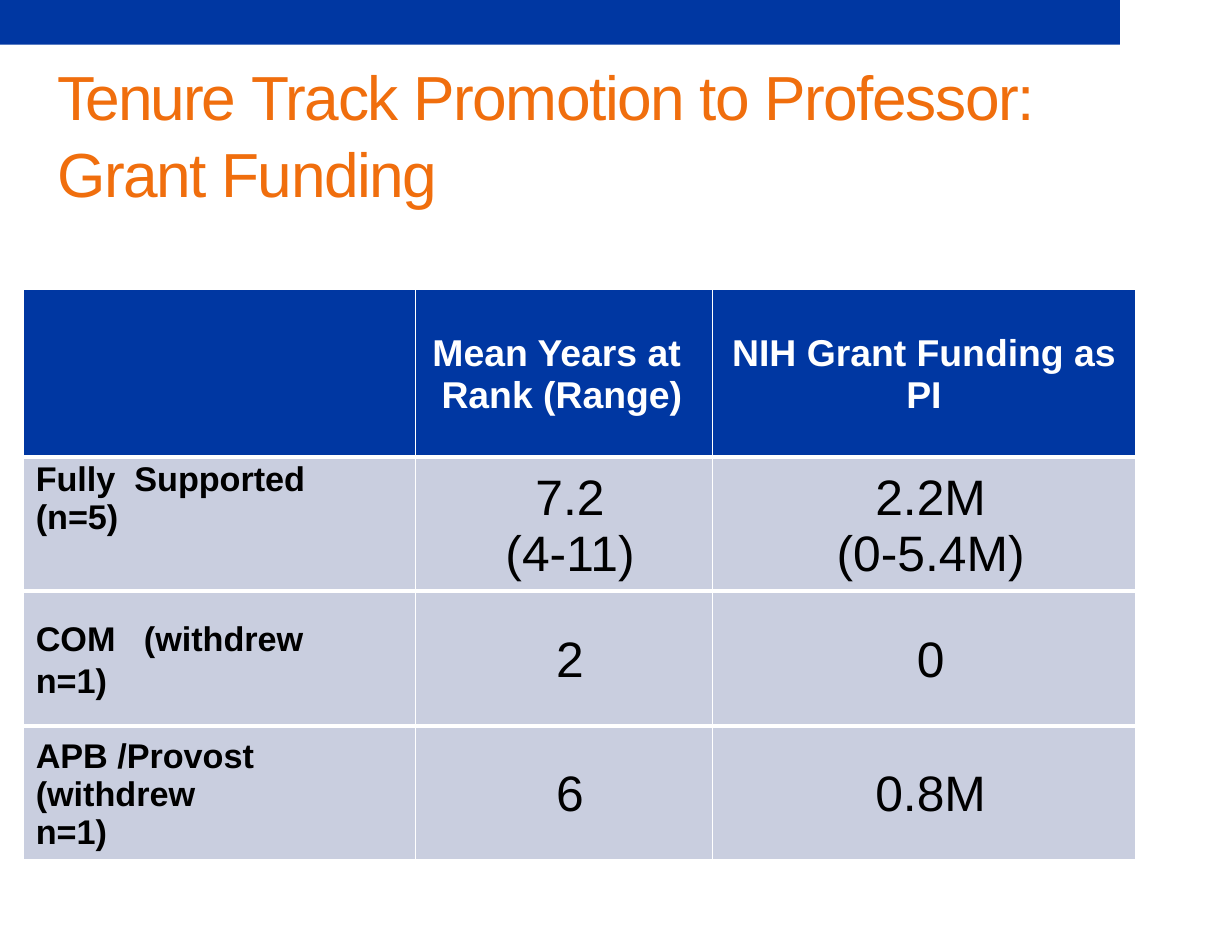
"""Build the slide on grant funding for tenure track promotions to professor."""
from dataclasses import dataclass

from lxml.etree import SubElement
from pptx import Presentation
from pptx.dml.color import RGBColor as Rgb
from pptx.enum.shapes import MSO_SHAPE as Shape
from pptx.enum.text import MSO_ANCHOR as Anchor, MSO_AUTO_SIZE as AutoSize, PP_ALIGN as Align
from pptx.oxml.ns import qn
from pptx.util import Inches, Pt


@dataclass(frozen=True)
class Theme:
    font: str = "Arial"
    blue: str = "0037A2"
    orange: str = "F06E0D"
    band: str = "C9CEDF"
    white: str = "FFFFFF"
    black: str = "000000"
    title: int = 40
    header: int = 24
    label: int = 22
    value: int = 32


THEME = Theme()
TITLE = [("Tenure ", -1.4), ("Track Promotion to Professor: Grant Funding", -0.9)]
HEADERS = [[], ["Mean Years at  Rank (Range)"], ["NIH Grant Funding as PI"]]
OUTCOMES = [
    [["Fully  Supported  (n=5)"], ["7.2", "(4-11)"], ["2.2M", "(0-5.4M)"]],
    [["COM   (withdrew", "n=1)"], ["2"], ["0"]],
    [["APB /Provost\v(withdrew \vn=1)"], ["6"], ["0.8M"]],
]
COLUMNS = [3.5, 2.65, 3.78]
ROWS = [1.5, 1.2, 1.2, 1.2]
INDENTS = [0.11, 0.11, 0.12]
HEADER_RIGHT = [0, 0.24, 0.12]
LABEL_RIGHT = 0.6


def style(paragraph, size, color, bold=False, align=Align.LEFT, before=0, indent=0):
    font = paragraph.font
    font.name, font.size, font.bold = THEME.font, Pt(size), bold
    font.color.rgb = Rgb.from_string(color)
    paragraph.alignment, paragraph.space_before = align, Pt(before)
    properties = paragraph._p.get_or_add_pPr()
    properties.set("marL", str(Inches(indent)))
    properties.set("indent", "0")


def paint(shape, color):
    shape.fill.solid()
    shape.fill.fore_color.rgb = Rgb.from_string(color)


def set_borders(cell, top, bottom):
    properties = cell._tc.get_or_add_tcPr()
    for position, (side, width) in enumerate(zip("LRTB", (1, 1, top, bottom))):
        line = SubElement(properties, qn(f"a:ln{side}"), w=str(Pt(width)))
        fill = SubElement(line, qn("a:solidFill"))
        SubElement(fill, qn("a:srgbClr"), val=THEME.white)
        properties.insert(position, line)


def add_title(slide):
    title = slide.shapes.title
    title.left, title.top, title.width, title.height = map(Inches, (0.5, 0.5, 9.41, 1.36))
    frame = title.text_frame
    frame.margin_left = frame.margin_right = frame.margin_bottom = 0
    frame.margin_top = Inches(0.01)
    frame.word_wrap, frame.auto_size = True, AutoSize.SHAPE_TO_FIT_TEXT
    frame.vertical_anchor = Anchor.MIDDLE
    heading = frame.paragraphs[0]
    style(heading, THEME.title, THEME.orange, before=0.9, indent=0.01)
    heading.line_spacing = 1.04
    for words, spacing in TITLE:
        run = heading.add_run()
        run.text = words
        run._r.get_or_add_rPr().set("spc", str(round(spacing * 100)))


def fill_cell(cell, lines, row, column):
    is_header, is_label = row == 0, column == 0
    if is_header:
        size, color, right = THEME.header, THEME.white, HEADER_RIGHT[column]
    elif is_label:
        size, color, right = THEME.label, THEME.black, LABEL_RIGHT
    else:
        size, color, right = THEME.value, THEME.black, 0
    cell.margin_left = cell.margin_bottom = 0
    cell.margin_top, cell.margin_right = Inches(0.03), Inches(right)
    cell.vertical_anchor = Anchor.TOP if (row, column) == (1, 0) else Anchor.MIDDLE
    paint(cell, THEME.blue if is_header else THEME.band)
    set_borders(cell, 1 if is_header else 3, 1 if row == len(ROWS) - 1 else 3)
    for number, line in enumerate(lines):
        paragraph = cell.text_frame.add_paragraph() if number else cell.text_frame.paragraphs[0]
        paragraph.text = line
        style(paragraph, size, color, is_header or is_label,
              Align.LEFT if is_label else Align.CENTER,
              2.4 if is_header or is_label else 0.1, INDENTS[column])


def add_funding_table(slide):
    table = slide.shapes.add_table(
        len(ROWS), len(COLUMNS), Inches(0.21), Inches(2.58),
        Inches(sum(COLUMNS)), Inches(sum(ROWS))).table
    for column, width in zip(table.columns, COLUMNS):
        column.width = Inches(width)
    for row, height in zip(table.rows, ROWS):
        row.height = Inches(height)
    for row, record in enumerate([HEADERS, *OUTCOMES]):
        for column, lines in enumerate(record):
            fill_cell(table.cell(row, column), lines, row, column)


def main():
    deck = Presentation()
    deck.slide_width, deck.slide_height = Inches(11), Inches(8.5)
    slide = deck.slides.add_slide(deck.slide_layouts[5])
    banner = slide.shapes.add_shape(Shape.RECTANGLE, 0, 0, Inches(10), Inches(0.4))
    banner.shadow.inherit = False
    paint(banner, THEME.blue)
    banner.line.fill.background()
    add_title(slide)
    add_funding_table(slide)
    deck.save("out.pptx")


if __name__ == "__main__":
    main()
